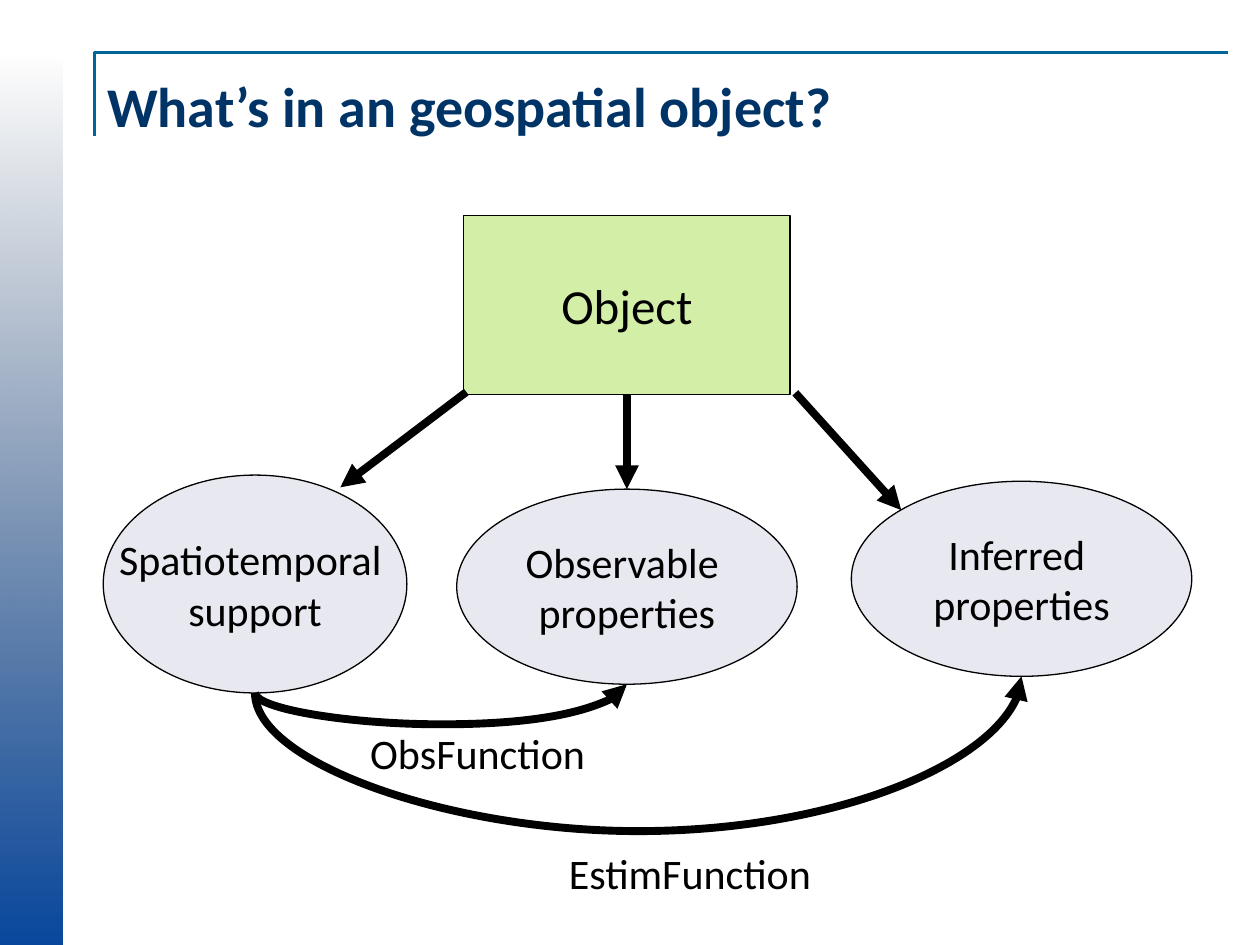
from lxml import etree
from pptx import Presentation
from pptx import util as u
from pptx.dml.color import RGBColor
from pptx.enum import shapes, text
from pptx.oxml.ns import qn

COLORS = {
    "title": "003366", "rule": "006699", "ink": "000000",
    "object": "D3EFA7", "part": "E8E8F1",
    "bar_bottom": "08479C", "bar_top": "042148",
}
FONT = "Calibri"
TITLE = "What’s in an geospatial object?"
TITLE_BOX = (54, 30, 642, 60)
BAR_BOX = (0, 30, 36, 510)
RULE_POINTS = [(54, 78), (54, 30), (702, 30)]

# name: (preset, fill, size, box, lines)
NODES = {
    "object": ("RECTANGLE", "object", 28, (265, 123, 186.5, 102.5), ["Object"]),
    "support": ("OVAL", "part", 24, (59, 271.5, 173.5, 124.5),
                ["Spatiotemporal ", "support"]),
    "observable": ("OVAL", "part", 24, (261, 279.5, 194.5, 111.5),
                   ["Observable ", "properties"]),
    "inferred": ("OVAL", "part", 24, (486.5, 275, 194.5, 111.5),
                 ["Inferred ", "properties"]),
}
CORNER_ARROWS = [((266.5, 224), (194.5, 278.5)), ((454.5, 224.5), (515, 291.5))]
# source, target, depth of the bend below the source
CURVES = [("support", "observable", 18), ("support", "inferred", 79)]
LABELS = [("ObsFunction", (204.5, 412, 139, 36.5)),
          ("EstimFunction", (318, 481, 155, 36.5))]


def rgb(name):
    return RGBColor.from_string(COLORS[name])


def points(values):
    return [u.Pt(value) for value in values]


def style(target, values):
    for name, value in values.items():
        setattr(target, name, value)


def write(frame, lines, size, color="ink", bold=False, **paragraph_format):
    for index, line in enumerate(lines):
        paragraph = frame.paragraphs[0] if index == 0 else frame.add_paragraph()
        paragraph.text = line
        style(paragraph, paragraph_format)
        style(paragraph.font, {"name": FONT, "size": u.Pt(size), "bold": bold})
        paragraph.font.color.rgb = rgb(color)


def set_line(shape, color, width):
    shape.line.color.rgb = rgb(color)
    shape.line.width = u.Pt(width)


def add_bar(slide):
    bar = slide.shapes.add_shape(shapes.MSO_SHAPE.RECTANGLE, *points(BAR_BOX))
    bar.shadow.inherit = False
    bar.line.fill.background()
    bar.fill.gradient()
    bar.fill.gradient_angle = 90
    for stop, name in zip(bar.fill.gradient_stops, ("bar_bottom", "bar_top")):
        stop.color.rgb = rgb(name)
    top_color = list(bar._element.iter(qn("a:srgbClr")))[-1]
    etree.SubElement(top_color, qn("a:alpha")).set("val", "0")


def add_rule(slide):
    start, *others = [points(point) for point in RULE_POINTS]
    builder = slide.shapes.build_freeform(*start)
    builder.add_line_segments(others, close=False)
    rule = builder.convert_to_shape()
    rule.shadow.inherit = False
    rule.fill.background()
    set_line(rule, "rule", 1.5)


def add_node(slide, preset, fill, size, box, lines):
    node = slide.shapes.add_shape(shapes.MSO_SHAPE[preset], *points(box))
    node.shadow.inherit = False
    node.fill.solid()
    node.fill.fore_color.rgb = rgb(fill)
    set_line(node, "ink", 0.75)
    style(node.text_frame, {"word_wrap": False,
                            "vertical_anchor": text.MSO_ANCHOR.MIDDLE})
    write(node.text_frame, lines, size, alignment=text.PP_ALIGN.CENTER)
    return node


def add_arrow(slide, start, end, kind=shapes.MSO_CONNECTOR.STRAIGHT):
    arrow = slide.shapes.add_connector(kind, *points(start + end))
    set_line(arrow, "ink", 4.5)
    etree.SubElement(arrow.line._get_or_add_ln(), qn("a:tailEnd")).set("type", "triangle")
    etree.SubElement(arrow._element.spPr, qn("a:effectLst"))
    return arrow


def bottom_center(name):
    left, top, width, height = NODES[name][3]
    return left + width / 2, top + height


def add_curve(slide, source, target, depth):
    """Hang a curve under two nodes: a quarter-turned connector bent outside its box."""
    start, end = bottom_center(source), bottom_center(target)
    curve = add_arrow(slide, start, end, shapes.MSO_CONNECTOR.CURVE)
    rise, run = start[1] - end[1], end[0] - start[0]
    center_x, center_y = (start[0] + end[0]) / 2, (start[1] + end[1]) / 2
    style(curve, {"left": u.Pt(center_x - rise / 2), "top": u.Pt(center_y - run / 2),
                  "width": u.Pt(rise), "height": u.Pt(run)})
    transform = curve._element.spPr.find(qn("a:xfrm"))
    for name, value in {"rot": "5400000", "flipH": "1", "flipV": "1"}.items():
        transform.set(name, value)
    geometry = curve._element.spPr.find(qn("a:prstGeom"))
    adjustments = geometry.find(qn("a:avLst"))
    guide = etree.SubElement(adjustments, qn("a:gd"))
    guide.set("name", "adj1")
    guide.set("fmla", f"val {round(-depth / rise * 100000)}")


def main():
    presentation = Presentation()
    style(presentation, {"slide_width": u.Pt(720), "slide_height": u.Pt(540)})
    slide = presentation.slides.add_slide(presentation.slide_layouts[5])
    add_bar(slide)
    add_rule(slide)

    title = slide.shapes.title
    style(title, dict(zip(("left", "top", "width", "height"), points(TITLE_BOX))))
    title.text_frame.vertical_anchor = text.MSO_ANCHOR.MIDDLE
    write(title.text_frame, [TITLE], 32, "title", True, alignment=text.PP_ALIGN.LEFT)

    nodes = {name: add_node(slide, *node) for name, node in NODES.items()}
    for start, end in CORNER_ARROWS:
        add_arrow(slide, start, end)
    middle = add_arrow(slide, (358, 225.5), (358, 279.5))
    middle.begin_connect(nodes["object"], 2)
    middle.end_connect(nodes["observable"], 0)
    for curve in CURVES:
        add_curve(slide, *curve)

    for label, box in LABELS:
        frame = slide.shapes.add_textbox(*points(box)).text_frame
        frame.word_wrap = False
        write(frame, [label], 24)
    presentation.save("out.pptx")


if __name__ == "__main__":
    main()
